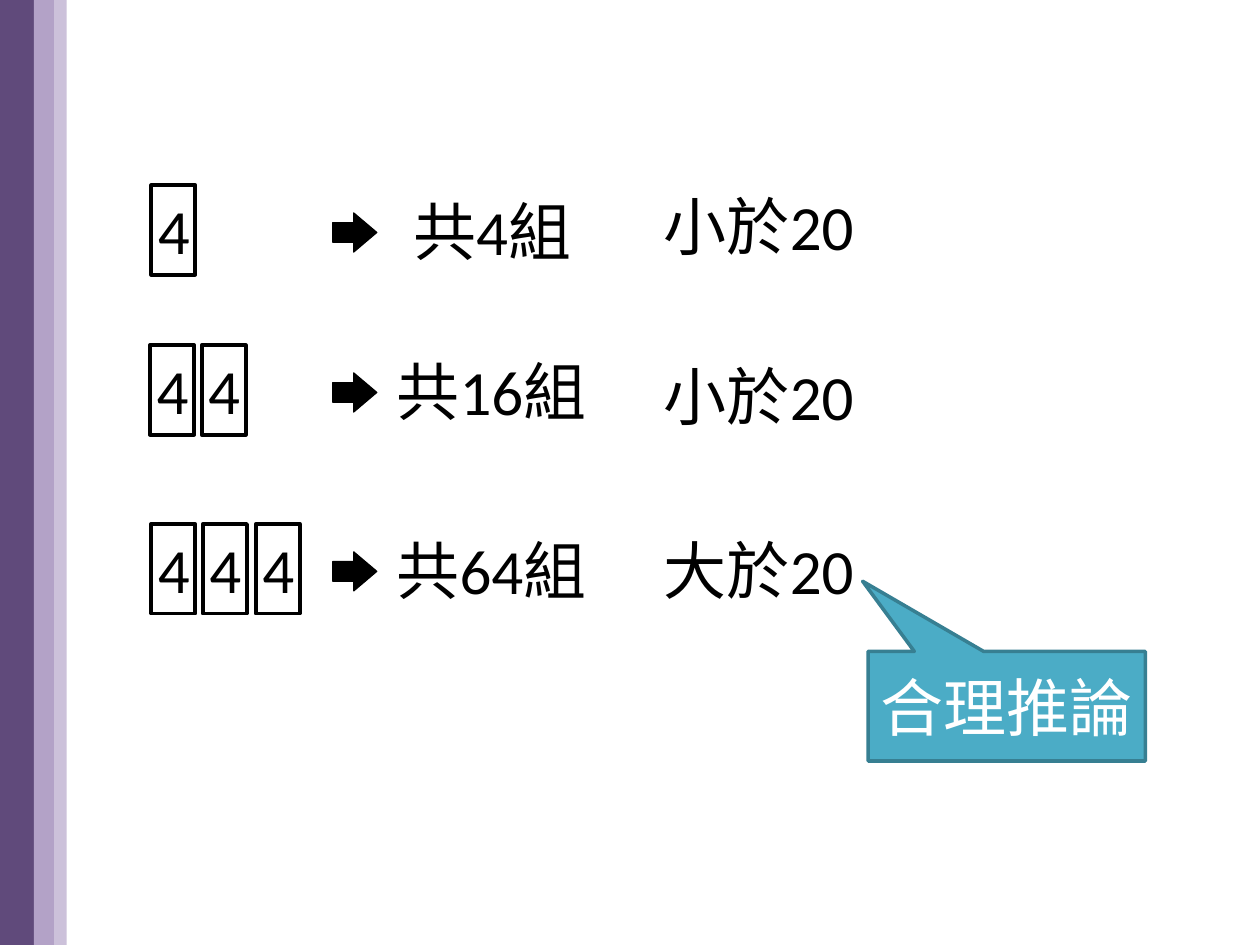
import pptx
import pptx.dml.color
import pptx.enum.shapes
import pptx.enum.text
import pptx.util

SHAPE = pptx.enum.shapes.MSO_SHAPE
ALIGN = pptx.enum.text.PP_ALIGN
EMU_PER_PX = 9144


def px(length):
    return pptx.util.Emu(length * EMU_PER_PX)


def colour(code):
    return pptx.dml.color.RGBColor.from_string(code)


class Board:
    font_name = "Calibri"
    font_size = 36
    ink = "000000"

    def __init__(self, slide):
        self.slide = slide

    def set_words(self, frame, words, ink, align):
        paragraph = frame.paragraphs[0]
        paragraph.text = words
        paragraph.alignment = align
        paragraph.font.name = self.font_name
        paragraph.font.size = pptx.util.Pt(self.font_size)
        paragraph.font.color.rgb = colour(ink)

    def shape(self, kind, box, fill=None, line=None, weight=1, adjust=()):
        item = self.slide.shapes.add_shape(kind, *map(px, box))
        item.shadow.inherit = False
        if fill:
            item.fill.solid()
            item.fill.fore_color.rgb = colour(fill)
        else:
            item.fill.background()
        if line:
            item.line.color.rgb = colour(line)
            item.line.width = pptx.util.Pt(weight)
        else:
            item.line.fill.background()
        for index, value in enumerate(adjust):
            item.adjustments[index] = value
        return item

    def text(self, box, words, align=ALIGN.CENTER, wrap=False):
        frame = self.slide.shapes.add_textbox(*map(px, box)).text_frame
        frame.word_wrap = wrap
        frame.auto_size = pptx.enum.text.MSO_AUTO_SIZE.SHAPE_TO_FIT_TEXT
        self.set_words(frame, words, self.ink, align)

    def card(self, left, top, digit):
        self.shape(SHAPE.RECTANGLE, (left, top, 35, 71), line=self.ink, weight=2.25)
        self.text((left - 5, top, 46, 71), digit)

    def arrow(self, left, top):
        self.shape(SHAPE.RIGHT_ARROW, (left, top, 35, 31), self.ink, self.ink,
                   0.75, (0.5, 0.59))

    def callout(self, box, words):
        bubble = self.shape(SHAPE.RECTANGULAR_CALLOUT, box, "4BACC6", "377F92",
                            2, (-0.52, -1.14))
        bubble.text_frame.vertical_anchor = pptx.enum.text.MSO_ANCHOR.MIDDLE
        self.set_words(bubble.text_frame, words, "FFFFFF", ALIGN.CENTER)


def main():
    deck = pptx.Presentation()
    deck.slide_width, deck.slide_height = px(1000), px(750)
    board = Board(deck.slides.add_slide(deck.slide_layouts[6]))

    for left, width, fill in ((0, 28, "604A7B"), (27, 16, "B3A2C7"), (43, 10, "CCC1DA")):
        board.shape(SHAPE.RECTANGLE, (left, 0, width, 750), fill)

    rows = (
        (120, 147, "共4組", 149, "小於20", 144, 393),
        (119, 274, "共16組", 172, "小於20", 279, 393),
        (120, 416, "共64組", 172, "大於20", 417, 212),
    )
    for cards, row in enumerate(rows, start=1):
        left, top, total, total_width, verdict, verdict_top, verdict_width = row
        for index in range(cards):
            board.card(left + index * 83 // 2, top, "4")
        board.arrow(264, top + 22)
        board.text((390 - total_width // 2, top + 1, total_width, 71), total)
        board.text((517, verdict_top, verdict_width, 71), verdict, ALIGN.LEFT, True)

    board.callout((689, 517, 220, 87), "合理推論")
    deck.save("out.pptx")


if __name__ == "__main__":
    main()
